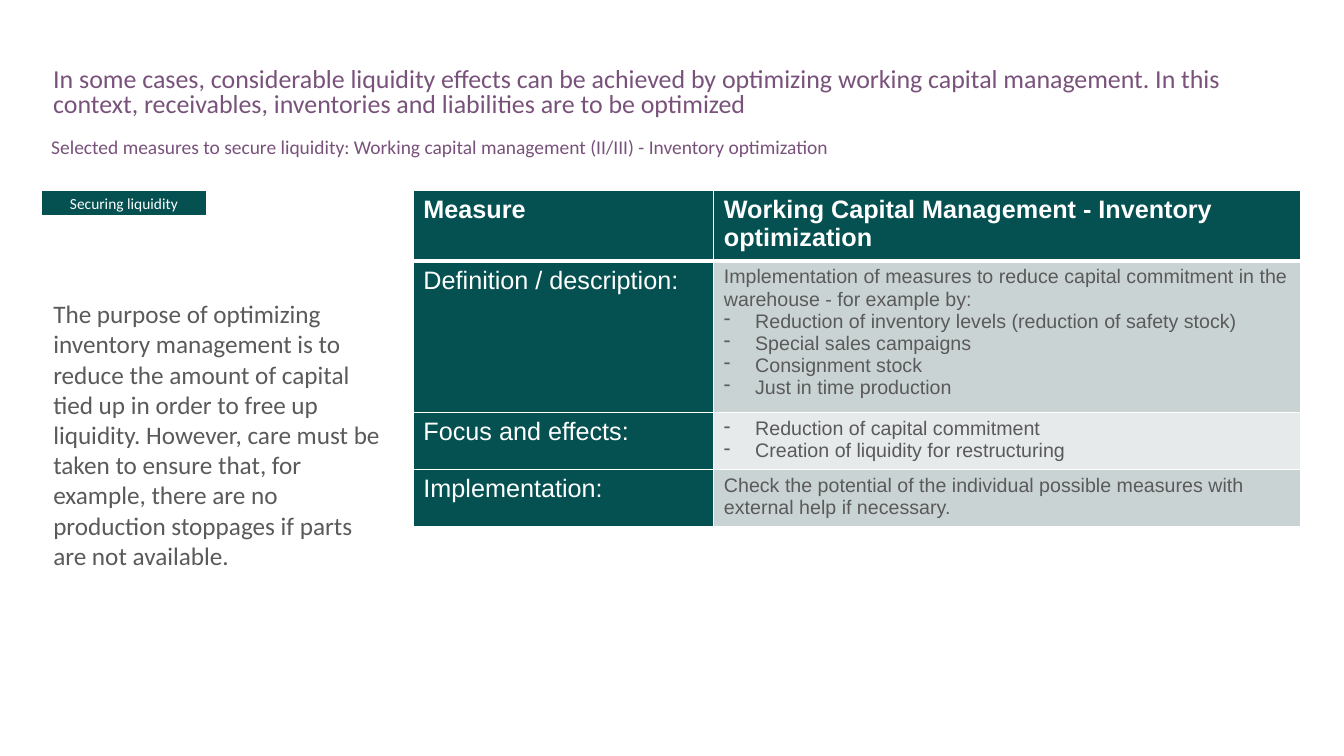
from lxml import etree
from pptx import Presentation
from pptx.dml.color import RGBColor
from pptx.enum.shapes import MSO_SHAPE as Shape
from pptx.enum.text import MSO_ANCHOR as Anchor, PP_ALIGN as Align
from pptx.oxml.ns import qn
from pptx.util import Inches, Pt

GREEN = "055152"
PURPLE = "79527B"
GREY = "595A59"
WHITE = "FFFFFF"


def color(value):
    return RGBColor.from_string(value)


def add_solid(parent, value):
    fill = etree.SubElement(parent, qn("a:solidFill"))
    etree.SubElement(fill, qn("a:srgbClr"), val=value)


class SlideBuilder:
    body_font = "Calibri"
    table_font = "Arial"

    def __init__(self, page):
        self.page = page

    def style(self, para, size, ink, font, bold=False):
        para.font.size = Pt(size)
        para.font.name = font
        para.font.bold = bold
        para.font.color.rgb = color(ink)

    def text(self, area, words, size, ink, spacing=1.0, anchor=Anchor.TOP):
        box = self.page.shapes.add_textbox(*map(Inches, area))
        frame = box.text_frame
        frame.word_wrap = True
        frame.vertical_anchor = anchor
        para = frame.paragraphs[0]
        para.text = words
        para.line_spacing = spacing
        self.style(para, size, ink, self.body_font)

    def tag(self, area, words):
        box = self.page.shapes.add_shape(Shape.RECTANGLE, *map(Inches, area))
        box.shadow.inherit = False
        box.fill.solid()
        box.fill.fore_color.rgb = color(GREEN)
        box.line.color.rgb = color(WHITE)
        box.line.width = Pt(1)
        box.text_frame.vertical_anchor = Anchor.MIDDLE
        para = box.text_frame.paragraphs[0]
        para.text = words
        para.alignment = Align.CENTER
        self.style(para, 11, WHITE, self.body_font)

    def dash(self, para):
        props = para._p.get_or_add_pPr()
        props.set("marL", str(Inches(0.31)))
        props.set("indent", str(-Inches(0.31)))
        tint = etree.SubElement(props, qn("a:buClr"))
        etree.SubElement(tint, qn("a:srgbClr"), val=GREY)
        etree.SubElement(props, qn("a:buChar"), char="-")

    def borders(self, cell, widths):
        props = cell._tc.get_or_add_tcPr()
        for index, (side, width) in enumerate(widths.items()):
            line = etree.Element(qn(f"a:ln{side}"), w=str(Pt(width)))
            add_solid(line, WHITE)
            props.insert(index, line)

    def cell(self, cell, lines, fill, size, ink, bold, widths):
        cell.fill.solid()
        cell.fill.fore_color.rgb = color(fill)
        self.borders(cell, widths)
        frame = cell.text_frame
        for index, line in enumerate(lines):
            para = frame.add_paragraph() if index else frame.paragraphs[0]
            para.text = line.removeprefix("- ")
            if line.startswith("- "):
                self.dash(para)
            self.style(para, size, ink, self.table_font, bold)

    def table(self, left, top, widths, heights, rows):
        area = (left, top, sum(widths), sum(heights))
        grid = self.page.shapes.add_table(
            len(rows), len(widths), *map(Inches, area)).table
        for column, width in zip(grid.columns, widths):
            column.width = Inches(width)
        for index, (label, lines, fill) in enumerate(rows):
            grid.rows[index].height = Inches(heights[index])
            header = index == 0
            edges = {"L": 1, "R": 1, "T": 3 if index == 1 else 1,
                     "B": 3 if header else 1}
            self.cell(grid.cell(index, 0), [label], GREEN, 18, WHITE, header, edges)
            size, ink = (18, WHITE) if header else (14, GREY)
            self.cell(grid.cell(index, 1), lines, fill, size, ink, header, edges)


MEASURES = [
    ("Measure", ["Working Capital Management - Inventory optimization"], GREEN),
    ("Definition / description:", [
        "Implementation of measures to reduce capital commitment in the "
        "warehouse - for example by:",
        "- Reduction of inventory levels (reduction of safety stock)",
        "- Special sales campaigns",
        "- Consignment stock",
        "- Just in time production"], "CAD3D4"),
    ("Focus and effects:", [
        "- Reduction of capital commitment",
        "- Creation of liquidity for restructuring"], "E6EAEA"),
    ("Implementation:", [
        "Check the potential of the individual possible measures with "
        "external help if necessary."], "CAD3D4"),
]


def main():
    deck = Presentation()
    deck.slide_width = Inches(13.33)
    deck.slide_height = Inches(7.5)
    builder = SlideBuilder(deck.slides.add_slide(deck.slide_layouts[6]))
    builder.text(
        (0.43, 1.79, 3.49, 5.04),
        "The purpose of optimizing inventory management is to reduce the amount "
        "of capital tied up in order to free up liquidity. However, care must be "
        "taken to ensure that, for example, there are no production stoppages if "
        "parts are not available.", 18, GREY, anchor=Anchor.MIDDLE)
    builder.text(
        (0.43, 0.63, 12.54, 0.64),
        "In some cases, considerable liquidity effects can be achieved by "
        "optimizing working capital management. In this context, receivables, "
        "inventories and liabilities are to be optimized", 18.5, PURPLE, 0.8)
    builder.text(
        (0.41, 1.35, 12.56, 0.28),
        "Selected measures to secure liquidity: Working capital management "
        "(II/III) - Inventory optimization", 13.9, PURPLE, 0.7)
    builder.table(4.1, 1.89, [2.98, 5.82], [0.65, 1.42, 0.54, 0.54], MEASURES)
    builder.tag((0.41, 1.89, 1.64, 0.25), "Securing liquidity")
    deck.save("out.pptx")


if __name__ == "__main__":
    main()
